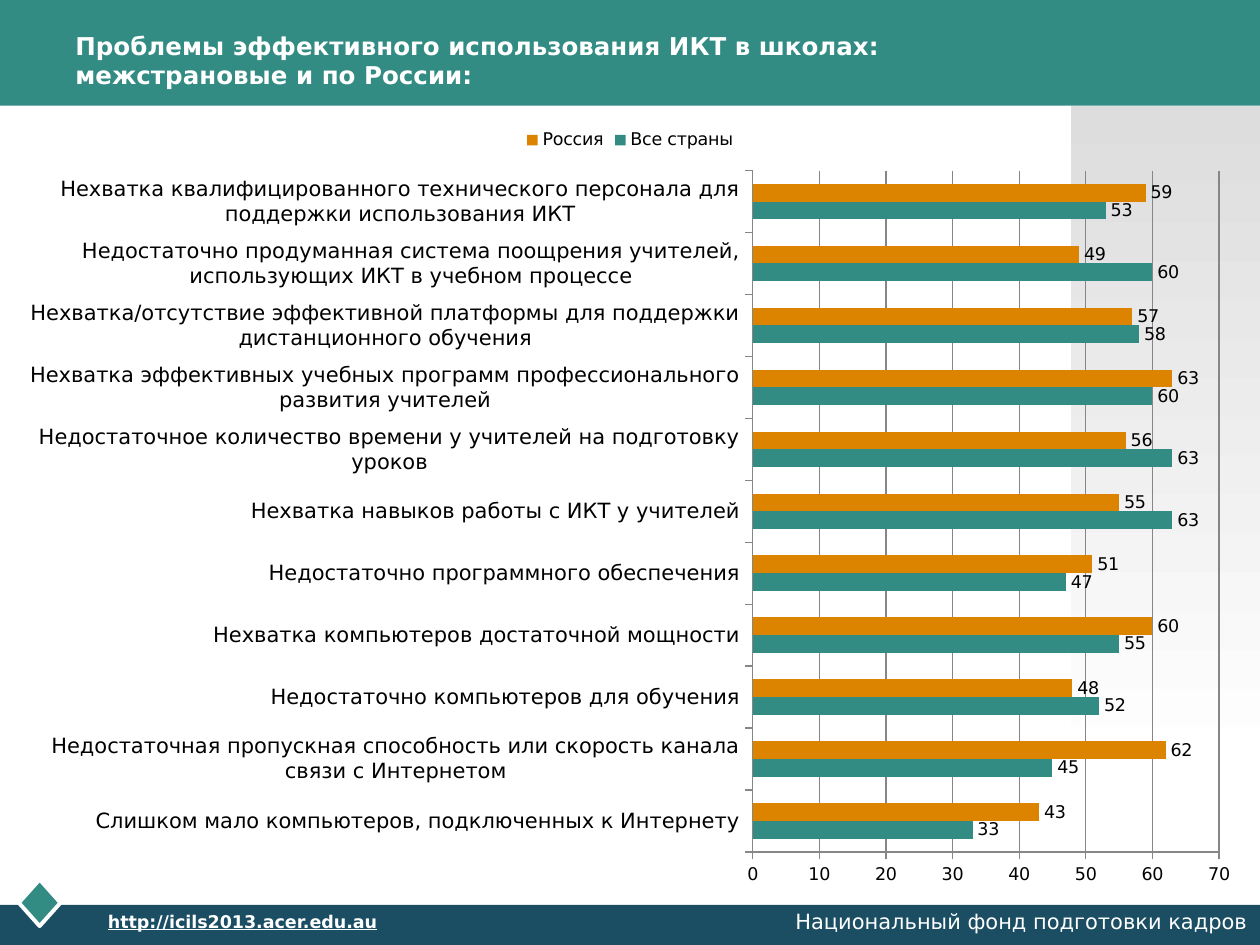
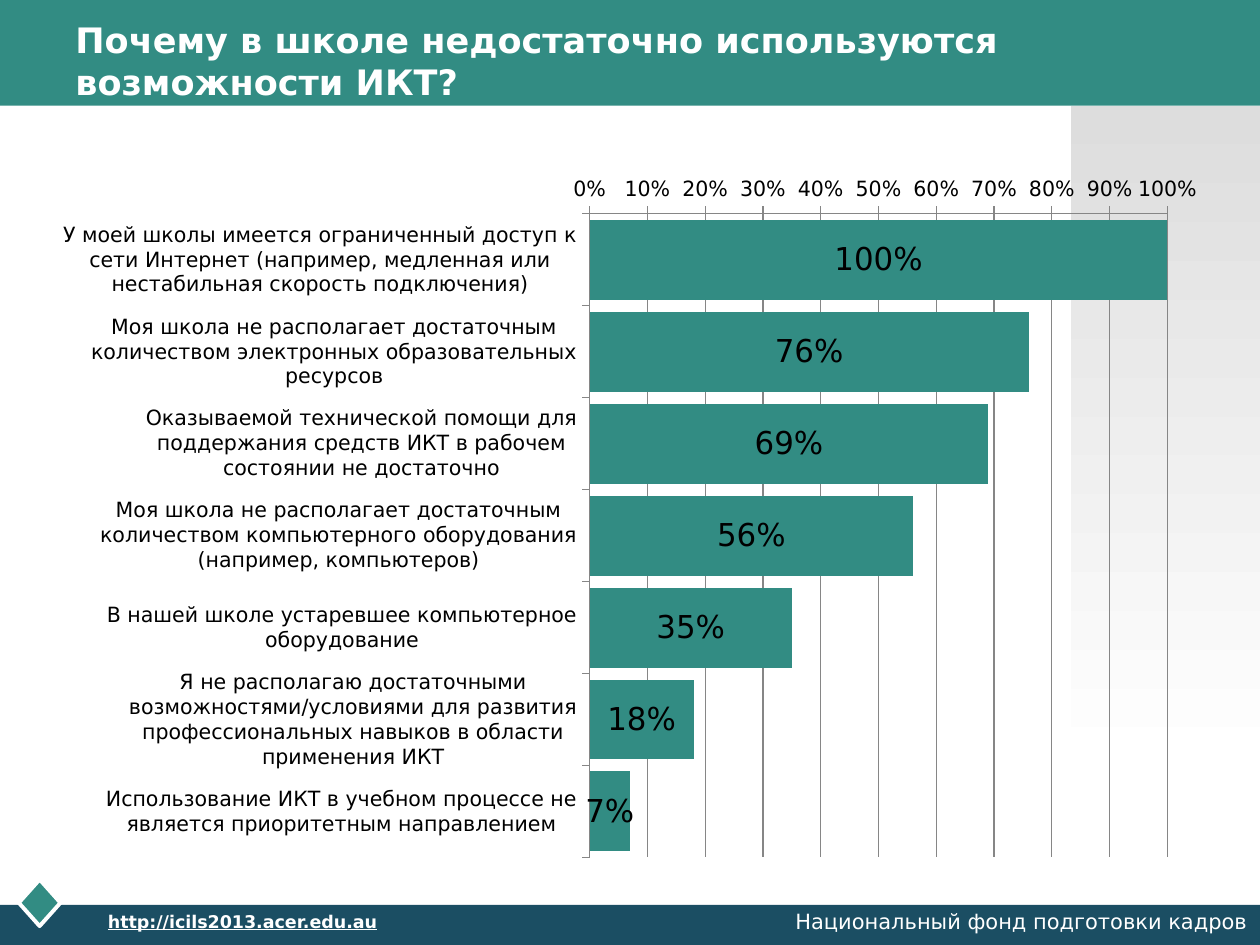
from dataclasses import dataclass
from typing import Optional

from lxml.etree import SubElement
from pptx import Presentation
from pptx.chart.data import CategoryChartData
from pptx.dml.color import RGBColor
from pptx.enum.chart import XL_CHART_TYPE as CT
from pptx.enum.chart import XL_LABEL_POSITION as LP
from pptx.enum.chart import XL_LEGEND_POSITION as LEG
from pptx.enum.chart import XL_TICK_MARK as TICK
from pptx.enum.shapes import MSO_SHAPE as SHAPE
from pptx.enum.text import MSO_ANCHOR as ANCHOR
from pptx.enum.text import PP_ALIGN as ALIGN
from pptx.oxml.ns import qn
from pptx.util import Cm, Pt

COLORS = {
    "teal": "328C83",
    "navy": "1B4E63",
    "orange": "DC8300",
    "white": "FFFFFF",
    "black": "000000",
    "shade": "DDDDDD",
    "grid": "868686",
}
FONT = "DejaVu Sans"
WIDTH, HEIGHT = 25.4, 19.05
BAND_H = 2.13
FOOTER_TOP = 18.24


@dataclass
class Box:
    left: float
    top: float
    width: float
    height: float

    def lengths(self) -> list:
        return [Cm(v) for v in (self.left, self.top, self.width, self.height)]


@dataclass
class Panel:
    kind: SHAPE
    box: Box
    fill: str
    line: Optional[str] = None


@dataclass
class Series:
    name: str
    values: tuple
    color: str


@dataclass
class BarChart:
    kind: CT
    box: Box
    categories: tuple
    series: tuple
    size: int
    value_size: int
    gap: int
    overlap: int
    number_format: str
    label_position: LP
    legend: bool = False
    reverse: bool = False
    maximum: Optional[float] = None
    step: Optional[float] = None
    plot_area: Optional[tuple] = None


@dataclass
class SlideSpec:
    title: str
    title_size: int
    chart: BarChart


PANELS = (
    Panel(SHAPE.RECTANGLE, Box(0, 0, WIDTH, BAND_H), "teal"),
    Panel(SHAPE.RECTANGLE, Box(0, FOOTER_TOP, WIDTH, HEIGHT - FOOTER_TOP), "navy"),
    Panel(SHAPE.DIAMOND, Box(0.38, 17.73, 0.84, 0.94), "teal", line="white"),
)

SLIDES = (
    SlideSpec(
        "Проблемы эффективного использования ИКТ в школах:\vмежстрановые и по России:",
        14,
        BarChart(
            CT.BAR_CLUSTERED,
            Box(0.1, 2.34, 25.2, 15.8),
            (
                "Слишком мало компьютеров, подключенных к Интернету",
                "Недостаточная пропускная способность или скорость канала связи с Интернетом",
                "Недостаточно компьютеров для обучения",
                "Нехватка компьютеров достаточной мощности",
                "Недостаточно программного обеспечения",
                "Нехватка навыков работы с ИКТ у учителей",
                "Недостаточное количество времени у учителей на подготовку уроков",
                "Нехватка эффективных учебных программ профессионального развития учителей",
                "Нехватка/отсутствие эффективной платформы для поддержки дистанционного обучения",
                "Недостаточно продуманная система поощрения учителей, использующих ИКТ в учебном процессе",
                "Нехватка квалифицированного технического персонала для поддержки использования ИКТ",
            ),
            (
                Series("Все страны", (33, 45, 52, 55, 47, 63, 63, 60, 58, 60, 53), "teal"),
                Series("Россия", (43, 62, 48, 60, 51, 55, 56, 63, 57, 49, 59), "orange"),
            ),
            size=10,
            value_size=10,
            gap=150,
            overlap=0,
            number_format="General",
            label_position=LP.OUTSIDE_END,
            legend=True,
        ),
    ),
    SlideSpec(
        "Почему в школе недостаточно используются возможности ИКТ?",
        20,
        BarChart(
            CT.BAR_STACKED,
            Box(1.27, 3, 22.86, 14.58),
            (
                "У моей школы имеется ограниченный доступ к сети Интернет (например, медленная или нестабильная скорость подключения)",
                "Моя школа не располагает достаточным количеством электронных образовательных ресурсов",
                "Оказываемой технической помощи для поддержания средств ИКТ в рабочем состоянии не достаточно",
                "Моя школа не располагает достаточным количеством компьютерного оборудования (например, компьютеров)",
                "В нашей школе устаревшее компьютерное оборудование",
                "Я не располагаю достаточными возможностями/условиями для развития профессиональных навыков в области применения ИКТ",
                "Использование ИКТ в учебном процессе не является приоритетным направлением",
            ),
            (Series("Series 1", (1, 0.76, 0.69, 0.56, 0.35, 0.18, 0.07), "teal"),),
            size=18,
            value_size=12,
            gap=15,
            overlap=100,
            number_format="0%",
            label_position=LP.CENTER,
            reverse=True,
            maximum=1,
            step=0.1,
            plot_area=(0.47, 0.09, 0.52, 0.89),
        ),
    ),
)


def rgb(name: str) -> RGBColor:
    return RGBColor.from_string(COLORS[name])


def add_panel(s, panel: Panel):
    sp = s.shapes.add_shape(panel.kind, *panel.box.lengths())
    sp.shadow.inherit = False
    sp.fill.solid()
    sp.fill.fore_color.rgb = rgb(panel.fill)
    if panel.line:
        sp.line.color.rgb = rgb(panel.line)
        sp.line.width = Pt(2.25)
    else:
        sp.line.fill.background()
    return sp


def add_text(s, text: str, box: Box, *, size: int, bold: bool = False,
             underline: bool = False, align: ALIGN = ALIGN.LEFT,
             anchor: ANCHOR = ANCHOR.TOP) -> None:
    tf = s.shapes.add_textbox(*box.lengths()).text_frame
    tf.word_wrap = True
    tf.vertical_anchor = anchor
    p = tf.paragraphs[0]
    p.text = text
    p.alignment = align
    for r in p.runs:
        r.font.name = FONT
        r.font.size = Pt(size)
        r.font.bold = bold
        r.font.underline = underline
        r.font.color.rgb = rgb("white")


def add_side_shade(s) -> None:
    sp = add_panel(s, Panel(SHAPE.RECTANGLE, Box(21.59, BAND_H, 3.81, 13.32), "shade"))
    sp.fill.gradient()
    sp.fill.gradient_angle = 270
    for stop, color in zip(sp.fill.gradient_stops, ("shade", "white")):
        stop.color.rgb = rgb(color)


def set_plot_area(chart, area: tuple) -> None:
    plot_area = chart.element.find(".//" + qn("c:plotArea"))
    for old in plot_area.findall(qn("c:layout")):
        plot_area.remove(old)
    layout = SubElement(plot_area, qn("c:layout"))
    plot_area.insert(0, layout)
    manual = SubElement(layout, qn("c:manualLayout"))
    settings = [("layoutTarget", "inner"), ("xMode", "edge"), ("yMode", "edge")]
    settings += zip("xywh", area)
    for tag, value in settings:
        SubElement(manual, qn(f"c:{tag}")).set("val", str(value))


def format_axes(chart, spec: BarChart) -> None:
    cat, val = chart.category_axis, chart.value_axis
    for axis, size in ((cat, 12), (val, spec.value_size)):
        axis.major_tick_mark = TICK.OUTSIDE
        axis.minor_tick_mark = TICK.NONE
        axis.format.line.color.rgb = rgb("grid")
        axis.tick_labels.font.size = Pt(size)
    cat.reverse_order = spec.reverse
    val.has_major_gridlines = True
    val.major_gridlines.format.line.color.rgb = rgb("grid")
    val.minimum_scale = 0
    val.maximum_scale = spec.maximum
    val.major_unit = spec.step
    val.tick_labels.number_format = spec.number_format
    val.tick_labels.number_format_is_linked = False


def add_bar_chart(s, spec: BarChart) -> None:
    data = CategoryChartData()
    data.categories = spec.categories
    for item in spec.series:
        data.add_series(item.name, item.values)
    chart = s.shapes.add_chart(spec.kind, *spec.box.lengths(), data).chart
    chart.font.name = FONT
    chart.font.size = Pt(spec.size)
    chart.font.color.rgb = rgb("black")
    chart.has_title = False
    chart.has_legend = spec.legend
    if spec.legend:
        chart.legend.position = LEG.TOP
        chart.legend.include_in_layout = False
    format_axes(chart, spec)
    plot = chart.plots[0]
    plot.vary_by_categories = False
    plot.gap_width = spec.gap
    plot.overlap = spec.overlap
    for series, item in zip(plot.series, spec.series):
        series.invert_if_negative = False
        series.format.fill.solid()
        series.format.fill.fore_color.rgb = rgb(item.color)
        labels = series.data_labels
        labels.show_value = True
        labels.position = spec.label_position
        labels.number_format = spec.number_format
        labels.number_format_is_linked = False
    if spec.plot_area:
        set_plot_area(chart, spec.plot_area)


def add_slide(prs, spec: SlideSpec) -> None:
    s = prs.slides.add_slide(prs.slide_layouts[6])
    for panel in PANELS:
        add_panel(s, panel)
    add_side_shade(s)
    add_text(s, spec.title, Box(1.27, 0.43, 22.86, 1.57), size=spec.title_size,
             bold=True, anchor=ANCHOR.MIDDLE)
    add_bar_chart(s, spec.chart)
    add_text(s, "http://icils2013.acer.edu.au", Box(1.07, FOOTER_TOP, 6.78, 0.58),
             size=10, bold=True, underline=True, align=ALIGN.RIGHT)
    add_text(s, "Национальный фонд подготовки кадров", Box(15.37, 18.19, 10.03, 0.66),
             size=12, align=ALIGN.RIGHT)


def main() -> None:
    prs = Presentation()
    prs.slide_width, prs.slide_height = Cm(WIDTH), Cm(HEIGHT)
    for spec in SLIDES:
        add_slide(prs, spec)
    prs.save("out.pptx")


if __name__ == "__main__":
    main()
